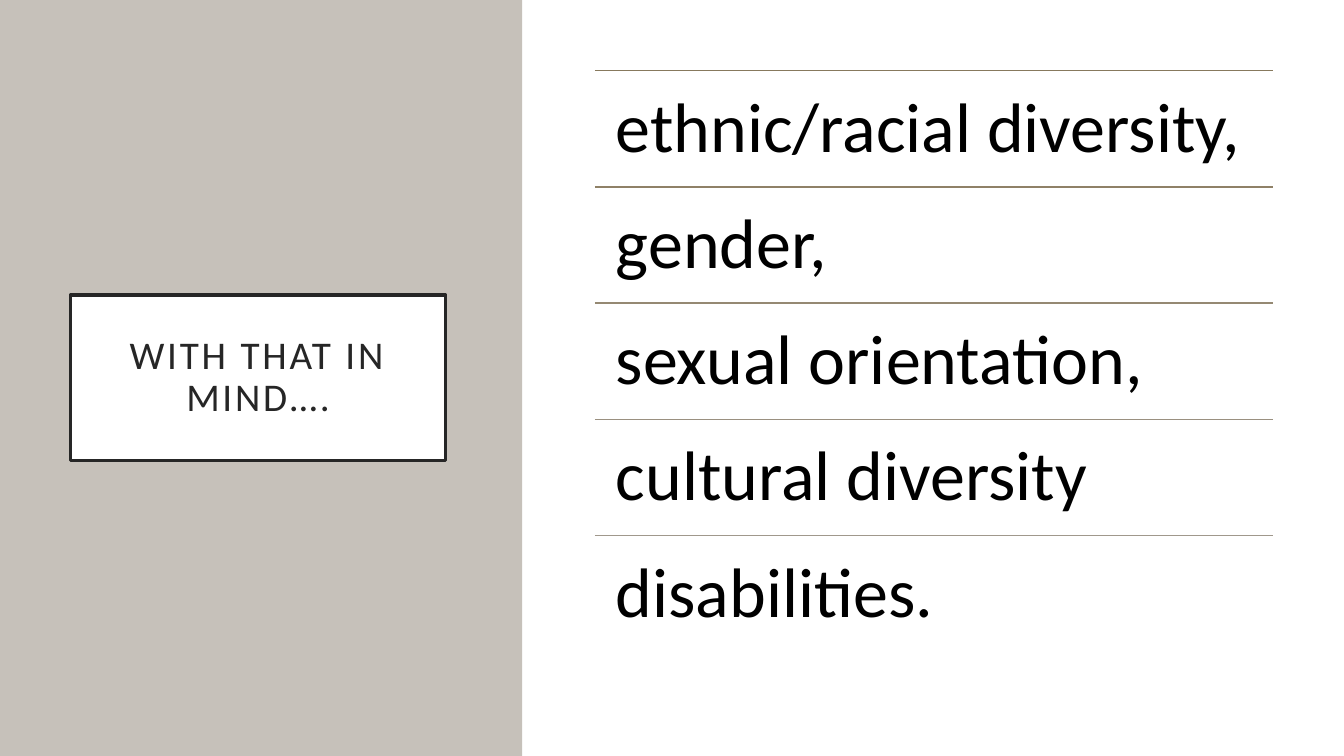
"""Build a slide with a boxed title beside a ruled list of diversity topics."""
from dataclasses import dataclass

from lxml import etree
from pptx import Presentation
from pptx.dml.color import RGBColor
from pptx.enum.shapes import MSO_CONNECTOR, MSO_SHAPE
from pptx.enum.text import MSO_ANCHOR, PP_ALIGN
from pptx.oxml.ns import qn
from pptx.shapes.autoshape import Shape
from pptx.slide import Slide
from pptx.text.text import TextFrame
from pptx.util import Cm, Pt

RECTANGLE = MSO_SHAPE.RECTANGLE
STRAIGHT = MSO_CONNECTOR.STRAIGHT
MIDDLE = MSO_ANCHOR.MIDDLE
TOP = MSO_ANCHOR.TOP
CENTER = PP_ALIGN.CENTER
LEFT = PP_ALIGN.LEFT

WHITE = RGBColor(0xFF, 0xFF, 0xFF)
BLACK = RGBColor(0x00, 0x00, 0x00)
CHARCOAL = RGBColor(0x26, 0x26, 0x26)
STONE = RGBColor(0xC6, 0xC1, 0xBA)

FONT = "Calibri"
SLIDE_WIDTH, SLIDE_HEIGHT = 33.87, 19.05
LIST_LEFT, LIST_TOP, LIST_WIDTH = 14.99, 1.78, 17.09
ROW_HEIGHT = 2.93


@dataclass(frozen=True)
class Box:
    left: float
    top: float
    width: float
    height: float
    fill: RGBColor


@dataclass(frozen=True)
class Topic:
    text: str
    rule_color: RGBColor


SIDE_PANEL = Box(0, 0, 13.16, SLIDE_HEIGHT, STONE)
TITLE_BOX = Box(1.78, 7.44, 9.45, 4.17, WHITE)
LIST_PANEL = Box(13.21, 0, SLIDE_WIDTH - 13.21, SLIDE_HEIGHT, WHITE)

TOPICS = [
    Topic("ethnic/racial diversity,", RGBColor(0x87, 0x79, 0x5D)),
    Topic("gender,", RGBColor(0x8F, 0x81, 0x67)),
    Topic("sexual orientation,", RGBColor(0x95, 0x89, 0x73)),
    Topic("cultural diversity", RGBColor(0x9A, 0x90, 0x80)),
    Topic("disabilities.", RGBColor(0xA0, 0x98, 0x8C)),
]


def add_box(slide: Slide, box: Box) -> Shape:
    shape = slide.shapes.add_shape(
        RECTANGLE, Cm(box.left), Cm(box.top), Cm(box.width), Cm(box.height)
    )
    shape.shadow.inherit = False
    shape.fill.solid()
    shape.fill.fore_color.rgb = box.fill
    shape.line.fill.background()
    return shape


def write_text(frame: TextFrame, text: str, size: int, color: RGBColor,
               inset: float, anchor: MSO_ANCHOR, alignment: PP_ALIGN) -> None:
    frame.text = text
    frame.word_wrap = True
    frame.vertical_anchor = anchor
    frame.margin_left = frame.margin_right = Cm(inset)
    frame.margin_top = frame.margin_bottom = Cm(inset)
    paragraph = frame.paragraphs[0]
    paragraph.alignment = alignment
    paragraph.line_spacing = 0.9
    font = paragraph.runs[0].font
    font.name = FONT
    font.size = Pt(size)
    font.color.rgb = color


def add_title(slide: Slide) -> None:
    shape = add_box(slide, TITLE_BOX)
    shape.line.color.rgb = CHARCOAL
    shape.line.width = Pt(2.5)
    frame = shape.text_frame
    write_text(frame, "WITH THAT IN MIND….", 28, CHARCOAL, 0.51, MIDDLE, CENTER)
    frame.paragraphs[0].runs[0].font._element.set("spc", "200")


def add_topic(slide: Slide, topic: Topic, top: float) -> None:
    rule = slide.shapes.add_connector(
        STRAIGHT, Cm(LIST_LEFT), Cm(top), Cm(LIST_LEFT + LIST_WIDTH), Cm(top)
    )
    rule.line.color.rgb = topic.rule_color
    rule.line.width = Pt(1)
    etree.SubElement(rule._element.spPr, qn("a:effectLst"))
    label = slide.shapes.add_textbox(
        Cm(LIST_LEFT), Cm(top), Cm(LIST_WIDTH), Cm(ROW_HEIGHT)
    )
    write_text(label.text_frame, topic.text, 50, BLACK, 0.53, TOP, LEFT)


def main() -> None:
    presentation = Presentation()
    presentation.slide_width = Cm(SLIDE_WIDTH)
    presentation.slide_height = Cm(SLIDE_HEIGHT)
    slide = presentation.slides.add_slide(presentation.slide_layouts[6])
    add_box(slide, SIDE_PANEL)
    add_title(slide)
    add_box(slide, LIST_PANEL)
    for index, topic in enumerate(TOPICS):
        add_topic(slide, topic, LIST_TOP + index * ROW_HEIGHT)
    presentation.save("out.pptx")


if __name__ == "__main__":
    main()
